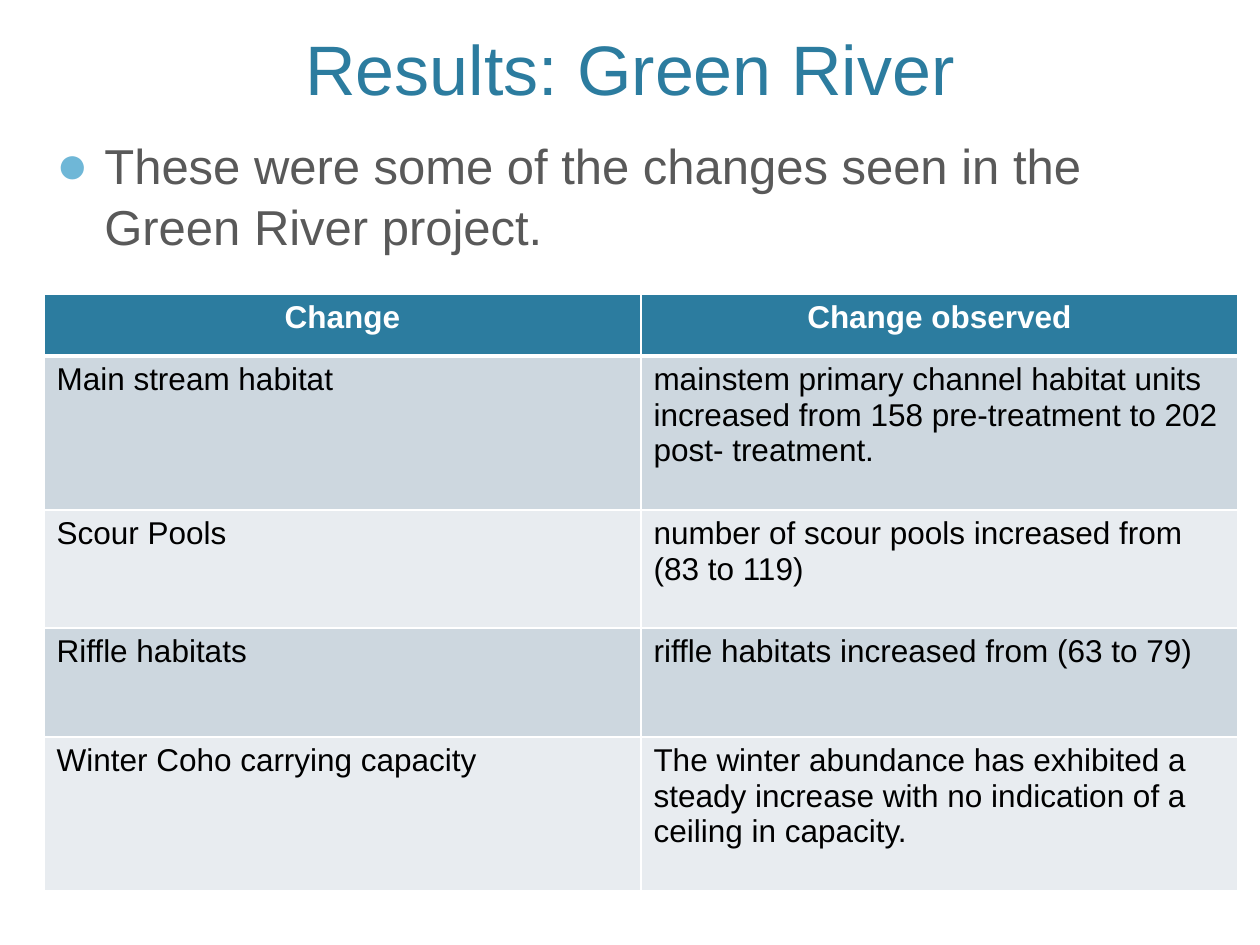
from dataclasses import dataclass

import pptx
import pptx.dml.color
import pptx.enum.text
import pptx.oxml
import pptx.oxml.ns
import pptx.util

PX = 914400 // 126
FONT = "Arial"
COLORS = {
    "accent": "2C7C9F",
    "bullet": "6FB7D7",
    "body": "595959",
    "black": "000000",
    "white": "FFFFFF",
    "band_dark": "CDD7DF",
    "band_light": "E8ECF0",
}
ALIGN = pptx.enum.text.PP_ALIGN
ANCHOR = pptx.enum.text.MSO_ANCHOR


@dataclass
class TextBox:
    text: str
    box: tuple[int, int, int, int]
    size: int
    color: str
    align: ALIGN = ALIGN.LEFT
    anchor: ANCHOR = ANCHOR.TOP


@dataclass
class Row:
    change: str
    observed: str
    height: int


TITLE = TextBox("Results: Green River", (76, 21, 1108, 95), 40, "accent",
                ALIGN.CENTER, ANCHOR.BOTTOM)
INTRO = TextBox("These were some of the changes seen in the Green River project.",
                (44, 126, 1194, 168), 28, "body")
ROWS = [
    Row("Change", "Change observed", 62),
    Row("Main stream habitat",
        "mainstem primary channel habitat units increased from 158 "
        "pre-treatment to 202 post- treatment.", 154),
    Row("Scour Pools", "number of scour pools increased from (83 to 119)", 118),
    Row("Riffle habitats", "riffle habitats increased from (63 to 79)", 109),
    Row("Winter Coho carrying capacity",
        "The winter abundance has exhibited a steady increase with no "
        "indication of a ceiling in capacity.", 154),
]


def rgb(name: str) -> pptx.dml.color.RGBColor:
    return pptx.dml.color.RGBColor.from_string(COLORS[name])


def xml(tag: str, attrs: str, inner: str = ""):
    ns = pptx.oxml.ns.nsdecls("a")
    return pptx.oxml.parse_xml(f"<a:{tag} {ns} {attrs}>{inner}</a:{tag}>")


def format_paragraph(p, size: int, color: str, align: ALIGN, bold: bool = False) -> None:
    p.alignment = align
    for r in p.runs:
        r.font.name = FONT
        r.font.size = pptx.util.Pt(size)
        r.font.bold = bold
        r.font.color.rgb = rgb(color)


def add_text(s, item: TextBox):
    sp = s.shapes.add_textbox(*(n * PX for n in item.box))
    tf = sp.text_frame
    tf.word_wrap = True
    tf.vertical_anchor = item.anchor
    tf.text = item.text
    p = tf.paragraphs[0]
    format_paragraph(p, item.size, item.color, item.align)
    return p


def add_bullet(p, indent: int) -> None:
    pPr = p._p.get_or_add_pPr()
    pPr.set("marL", str(indent * PX))
    pPr.set("indent", str(-indent * PX))
    pPr.append(xml("buClr", "", f'<a:srgbClr val="{COLORS["bullet"]}"/>'))
    pPr.append(xml("buSzPct", 'val="110000"'))
    pPr.append(xml("buFont", f'typeface="{FONT}"'))
    pPr.append(xml("buChar", 'char="●"'))


def set_borders(cell, top: int, bottom: int) -> None:
    tcPr = cell._tc.get_or_add_tcPr()
    fill = f'<a:solidFill><a:srgbClr val="{COLORS["white"]}"/></a:solidFill>'
    widths = {"lnL": 1, "lnR": 1, "lnT": top, "lnB": bottom}
    for i, (side, width) in enumerate(widths.items()):
        tcPr.insert(i, xml(side, f'w="{pptx.util.Pt(width)}"', fill))


def add_changes_table(s, rows: list[Row], x: int, y: int, w: int) -> None:
    height = sum(row.height for row in rows)
    table = s.shapes.add_table(len(rows), 2, x * PX, y * PX, w * PX, height * PX).table
    for i, row in enumerate(rows):
        table.rows[i].height = row.height * PX
        header = i == 0
        band = "accent" if header else "band_dark" if i % 2 else "band_light"
        for cell, text in zip(table.rows[i].cells, (row.change, row.observed)):
            cell.text_frame.text = text
            format_paragraph(cell.text_frame.paragraphs[0], 18,
                             "white" if header else "black",
                             ALIGN.CENTER if header else ALIGN.LEFT, header)
            cell.fill.solid()
            cell.fill.fore_color.rgb = rgb(band)
            set_borders(cell, top=3 if i == 1 else 1, bottom=3 if header else 1)


def main() -> None:
    prs = pptx.Presentation()
    prs.slide_width = pptx.util.Inches(10)
    prs.slide_height = pptx.util.Inches(7.5)
    s = prs.slides.add_slide(prs.slide_layouts[6])

    # Title
    add_text(s, TITLE)

    # Introductory bullet
    p = add_text(s, INTRO)
    p.space_before = pptx.util.Pt(20)
    p.line_spacing = 1.05
    add_bullet(p, 48)

    # Table of observed changes
    add_changes_table(s, ROWS, 44, 294, 1194)

    prs.save("out.pptx")


if __name__ == "__main__":
    main()
